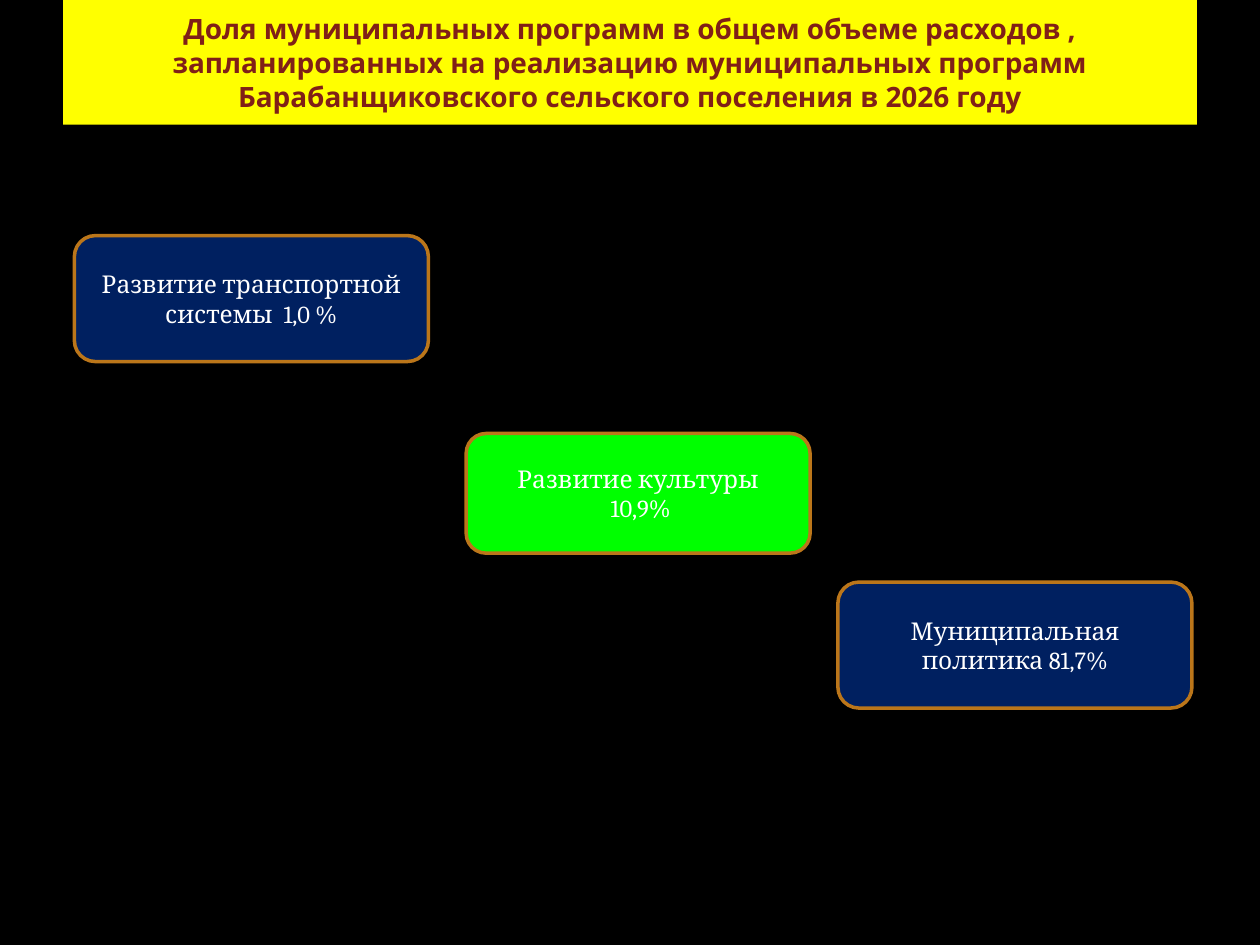
from dataclasses import dataclass

from pptx import Presentation
from pptx import util as u
from pptx.dml.color import RGBColor
from pptx.enum import shapes, text


@dataclass(frozen=True)
class Theme:
    background: str = "000000"
    banner: str = "FFFF00"
    heading: str = "802017"
    navy: str = "002060"
    green: str = "00FF00"
    border: str = "BB761A"
    light: str = "FFFFFF"
    title_font: str = "Open Sans"
    body_font: str = "Cambria"
    title_size: int = 16
    body_size: int = 14
    border_width: int = 2


class SlideBuilder:
    def __init__(self, s, theme):
        self.s, self.theme = s, theme
        self.paint(s.background, theme.background)

    def paint(self, target, color):
        target.fill.solid()
        target.fill.fore_color.rgb = RGBColor.from_string(color)

    def place(self, sp, box):
        for name, value in zip(("left", "top", "width", "height"), box):
            setattr(sp, name, u.Inches(value))

    def add_lines(self, sp, lines, color, **font):
        tf = sp.text_frame
        frame = {"word_wrap": True, "auto_size": text.MSO_AUTO_SIZE.NONE,
                 "vertical_anchor": text.MSO_ANCHOR.MIDDLE}
        for name, value in frame.items():
            setattr(tf, name, value)
        for i, line in enumerate(lines):
            p = tf.add_paragraph() if i else tf.paragraphs[0]
            p.alignment = text.PP_ALIGN.CENTER
            r = p.add_run()
            r.text = line
            r.font.color.rgb = RGBColor.from_string(color)
            for name, value in font.items():
                setattr(r.font, name, value)

    def title(self, line, box):
        t, sp = self.theme, self.s.shapes.title
        self.place(sp, box)
        self.paint(sp, t.banner)
        self.add_lines(sp, [line], t.heading, name=t.title_font,
                       size=u.Pt(t.title_size), bold=True)

    def card(self, lines, box, fill):
        t = self.theme
        sp = self.s.shapes.add_shape(
            shapes.MSO_SHAPE.ROUNDED_RECTANGLE, *map(u.Inches, box))
        sp.shadow.inherit = False
        self.paint(sp, fill)
        sp.line.color.rgb = RGBColor.from_string(t.border)
        sp.line.width = u.Pt(t.border_width)
        self.add_lines(sp, lines, t.light, name=t.body_font,
                       size=u.Pt(t.body_size))


def main():
    prs = Presentation()
    prs.slide_width, prs.slide_height = u.Inches(10), u.Inches(7.5)
    theme = Theme()
    # Title Only layout on a black background
    slide = SlideBuilder(prs.slides.add_slide(prs.slide_layouts[5]), theme)

    # Heading banner
    slide.title("Доля муниципальных программ в общем объеме расходов , "
                "запланированных на реализацию муниципальных программ "
                "Барабанщиковского сельского поселения в 2026 году",
                (0.5, 0, 9, 0.99))

    # Programme shares
    programmes = [
        (["Развитие культуры", " 10,9%"], (3.7, 3.44, 2.73, 0.95), theme.green),
        (["Развитие транспортной системы  1,0 %"], (0.59, 1.87, 2.81, 1), theme.navy),
        (["Муниципальная политика 81,7%"], (6.65, 4.62, 2.81, 1), theme.navy),
    ]
    for lines, box, fill in programmes:
        slide.card(lines, box, fill)

    prs.save("out.pptx")


if __name__ == "__main__":
    main()
